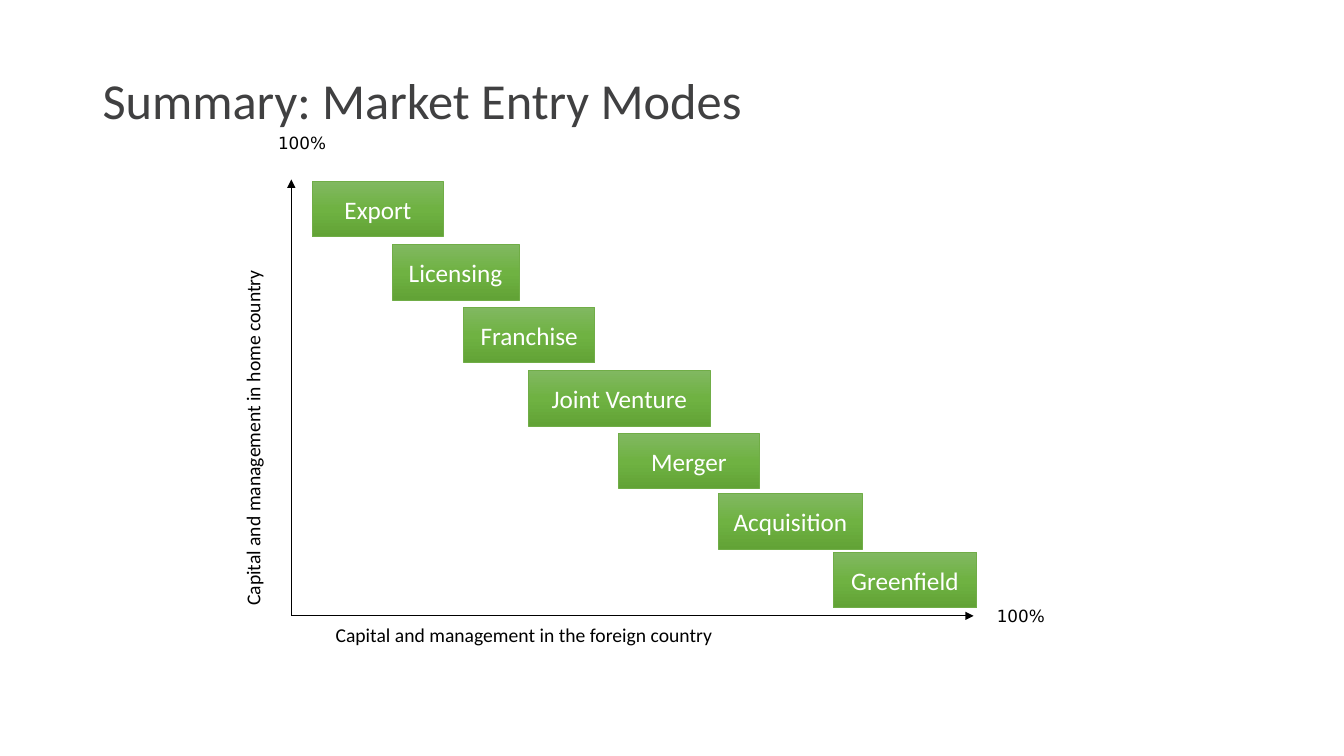
"""Build the market entry modes summary slide."""
from dataclasses import dataclass

import pptx
import pptx.dml.color
import pptx.enum.shapes
import pptx.enum.text
import pptx.oxml
import pptx.oxml.ns
import pptx.util

Pt = pptx.util.Pt
qn = pptx.oxml.ns.qn
ANCHOR = pptx.enum.text.MSO_ANCHOR
ALIGN = pptx.enum.text.PP_ALIGN


@dataclass(frozen=True)
class Theme:
    font: str = "Calibri"
    percent_font: str = "DejaVu Sans"
    title: str = "404041"
    ink: str = "000000"
    mode_text: str = "FFFFFF"
    mode_line: str = "70AD47"
    mode_stops: tuple = ((0, "81B861"), (50, "6FB242"), (100, "62A336"))
    title_size: float = 36
    mode_size: float = 18
    axis_size: float = 14
    percent_size: float = 12
    axis_width: float = 0.75
    mode_line_width: float = 0.5


THEME = Theme()
MODE_HEIGHT = 39.6
MODES = (
    ("Export", 223.2, 129.6, 93.6),
    ("Licensing", 280, 174.6, 90.7),
    ("Franchise", 331.2, 219.6, 93.6),
    ("Joint Venture", 377.2, 264.6, 130.3),
    ("Merger", 442, 309.6, 100.2),
    ("Acquisition", 513.4, 352.6, 102.4),
    ("Greenfield", 595.2, 394.6, 102.4),
)
ORIGIN = (208.1, 439.9)
AXIS_ENDS = ((695.5, 439.9), (208.1, 128.2))


def rgb(value):
    return pptx.dml.color.RGBColor.from_string(value)


def add_run(p, text, size, color, font=THEME.font):
    r = p.add_run()
    r.text = text
    r.font.name = font
    r.font.size = Pt(size)
    r.font.color.rgb = rgb(color)


def add_text(s, text, box, size, color=THEME.ink, font=THEME.font,
             anchor=ANCHOR.TOP, spacing=None, vertical=False):
    tf = s.shapes.add_textbox(*map(Pt, box)).text_frame
    tf.word_wrap = True
    tf.vertical_anchor = anchor
    if vertical:
        tf._txBody.bodyPr.set("vert", "vert270")
    p = tf.paragraphs[0]
    if spacing:
        p.line_spacing = spacing
    add_run(p, text, size, color, font)


def fill_gradient(sp, stops):
    sp.fill.gradient()
    sp.fill.gradient_angle = 270
    gs_list = sp._element.spPr.find(qn("a:gradFill")).find(qn("a:gsLst"))
    for gs in list(gs_list):
        gs_list.remove(gs)
    for percent, color in stops:
        gs = pptx.oxml.parse_xml(
            f'<a:gs {pptx.oxml.ns.nsdecls("a")} pos="{percent * 1000}">'
            f'<a:srgbClr val="{color}"/></a:gs>')
        gs_list.append(gs)


def add_mode(s, name, left, top, width):
    sp = s.shapes.add_shape(pptx.enum.shapes.MSO_SHAPE.RECTANGLE,
                            Pt(left), Pt(top), Pt(width), Pt(MODE_HEIGHT))
    sp.shadow.inherit = False
    fill_gradient(sp, THEME.mode_stops)
    sp.line.color.rgb = rgb(THEME.mode_line)
    sp.line.width = Pt(THEME.mode_line_width)
    tf = sp.text_frame
    tf.margin_left = tf.margin_right = tf.margin_top = tf.margin_bottom = 0
    tf.vertical_anchor = ANCHOR.MIDDLE
    p = tf.paragraphs[0]
    p.alignment = ALIGN.CENTER
    add_run(p, name, THEME.mode_size, THEME.mode_text)


def add_axis(s, start, end):
    line = s.shapes.add_connector(pptx.enum.shapes.MSO_CONNECTOR.STRAIGHT,
                                  *map(Pt, start + end))
    line.line.color.rgb = rgb(THEME.ink)
    line.line.width = Pt(THEME.axis_width)
    ln = line.line._get_or_add_ln()
    ln.append(ln.makeelement(qn("a:tailEnd"), {"type": "triangle"}))
    spPr = line._element.spPr
    spPr.append(spPr.makeelement(qn("a:effectLst"), {}))


def main():
    prs = pptx.Presentation()
    prs.slide_width, prs.slide_height = Pt(960), Pt(540)
    s = prs.slides.add_slide(prs.slide_layouts[6])

    for end in AXIS_ENDS:
        add_axis(s, ORIGIN, end)
    add_text(s, "Capital and management in home country",
             (168.5, 77, 31.7, 362.9), THEME.axis_size, vertical=True)
    add_text(s, "Capital and management in the foreign country",
             (232.6, 441.4, 362.9, 31.7), THEME.axis_size)
    for mode in MODES:
        add_mode(s, *mode)
    for left, top in ((191.5, 91.4), (704.9, 429.1)):
        add_text(s, "100%", (left, top, 64.1, 21.6), THEME.percent_size,
                 font=THEME.percent_font)
    add_text(s, "Summary: Market Entry Modes", (66.2, 21.6, 828, 104.4),
             THEME.title_size, THEME.title, anchor=ANCHOR.MIDDLE, spacing=0.9)

    prs.save("out.pptx")


if __name__ == "__main__":
    main()
